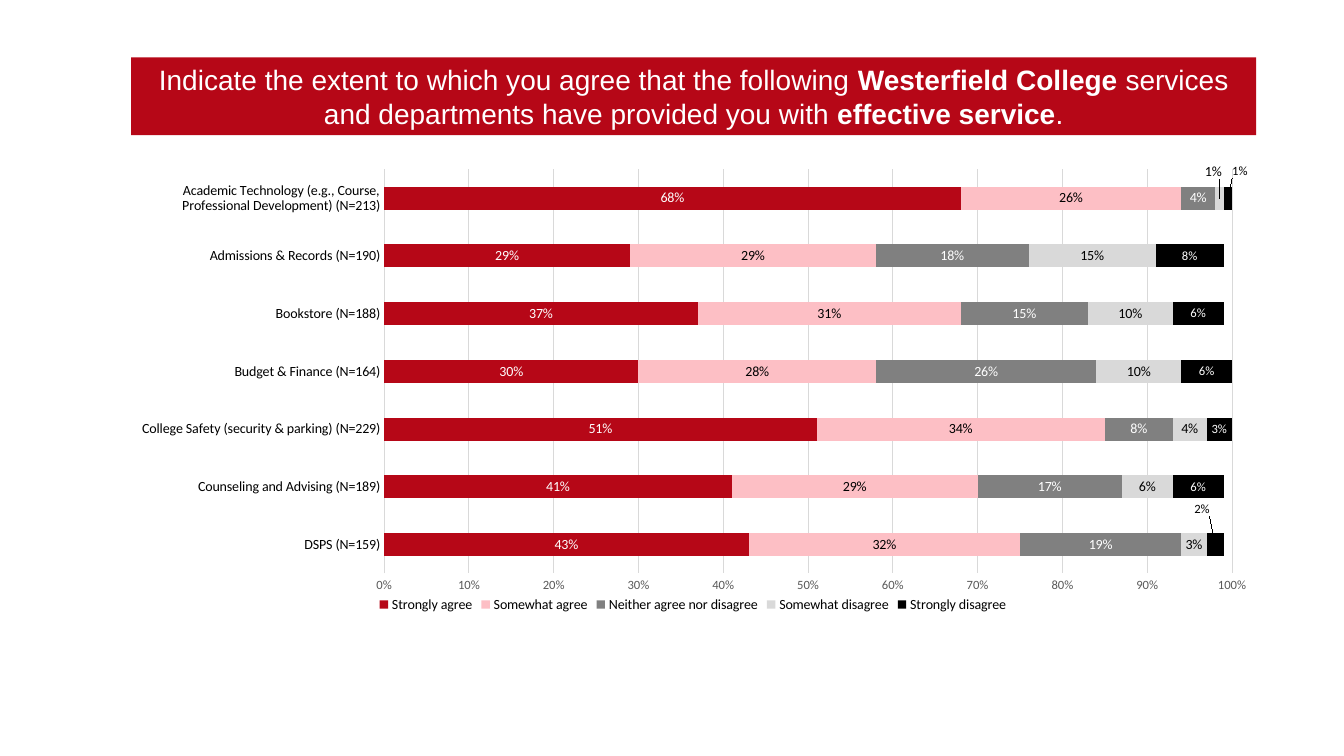
from lxml import etree
from pptx import Presentation
from pptx.chart.data import CategoryChartData
from pptx.dml.color import RGBColor
from pptx.enum.chart import XL_CHART_TYPE, XL_LABEL_POSITION, XL_LEGEND_POSITION, XL_TICK_MARK
from pptx.enum.text import MSO_ANCHOR, MSO_AUTO_SIZE, PP_ALIGN
from pptx.oxml.ns import qn
from pptx.util import Inches, Pt

BAR_STACKED = XL_CHART_TYPE.BAR_STACKED
LABEL_CENTER = XL_LABEL_POSITION.CENTER
LEGEND_BOTTOM = XL_LEGEND_POSITION.BOTTOM
NO_TICK = XL_TICK_MARK.NONE
MIDDLE = MSO_ANCHOR.MIDDLE
NO_AUTOFIT = MSO_AUTO_SIZE.NONE
CENTER = PP_ALIGN.CENTER

COLORS = {
    "red": "B60717", "pink": "FDBFC5", "gray": "808080", "light": "D9D9D9",
    "black": "000000", "white": "FFFFFF", "axis": "595959",
}
TITLE = [
    ("Indicate the extent to which you agree that the following ", False),
    ("Westerfield College ", True),
    ("services and departments have provided you with ", False),
    ("effective service", True),
    (".", False),
]
SERVICES = [
    "DSPS (N=159)",
    "Counseling and Advising (N=189)",
    "College Safety (security & parking) (N=229)",
    "Budget & Finance (N=164)",
    "Bookstore (N=188)",
    "Admissions & Records (N=190)",
    "Academic Technology (e.g., Course, Professional Development) (N=213)",
]
ANSWERS = [
    ("Strongly agree", [0.43, 0.41, 0.51, 0.3, 0.37, 0.29, 0.68], "red", "white", 10),
    ("Somewhat agree", [0.32, 0.29, 0.34, 0.28, 0.31, 0.29, 0.26], "pink", "black", 10),
    ("Neither agree nor disagree", [0.19, 0.17, 0.08, 0.26, 0.15, 0.18, 0.04], "gray", "white", 10),
    ("Somewhat disagree", [0.03, 0.06, 0.04, 0.1, 0.1, 0.15, 0.01], "light", "black", 10),
    ("Strongly disagree", [0.02, 0.06, 0.03, 0.06, 0.06, 0.08, 0.01], "black", "white", 9),
]
MOVED_LABELS = {
    "Somewhat disagree": {6: (-0.06, -0.26)},
    "Strongly disagree": {0: (-0.13, -0.35), 6: (0.12, -0.27)},
}
CHART_LEFT, CHART_TOP, CHART_WIDTH, CHART_HEIGHT = 1.18, 1.59, 11.41, 4.69
PLOT = (3.81, 1.68, 8.41, 4.01)
LEGEND = (3.72, 5.88)


def color(name):
    return RGBColor.from_string(COLORS[name])


def style(font, size, tone, name="Calibri", bold=False):
    font.size = Pt(size)
    font.name = name
    font.bold = bold
    font.color.rgb = color(tone)


def add_text(para, text, **format):
    span = para.add_run()
    span.text = text
    style(span.font, **format)


def set_layout(parent, index, **values):
    for old in parent.findall(qn("c:layout")):
        parent.remove(old)
    layout = etree.Element(qn("c:layout"))
    manual = etree.SubElement(layout, qn("c:manualLayout"))
    for tag, value in values.items():
        etree.SubElement(manual, qn("c:" + tag)).set("val", str(value))
    parent.insert(index, layout)


def add_title(page):
    box = page.shapes.title
    box.left, box.top = Inches(1.3), Inches(0.57)
    box.width, box.height = Inches(11.16), Inches(0.77)
    box.fill.solid()
    box.fill.fore_color.rgb = color("red")
    frame = box.text_frame
    frame.word_wrap = True
    frame.auto_size = NO_AUTOFIT
    frame.vertical_anchor = MIDDLE
    para = frame.paragraphs[0]
    para.alignment = CENTER
    for text, bold in TITLE:
        add_text(para, text, size=20, tone="white", name="Arial", bold=bold)


def format_series(series, fill, tone, size):
    series.format.fill.solid()
    series.format.fill.fore_color.rgb = color(fill)
    labels = series.data_labels
    labels.show_value = True
    labels.number_format = "0%"
    labels.number_format_is_linked = False
    labels.position = LABEL_CENTER
    style(labels.font, size, tone)
    moves = MOVED_LABELS.get(series.name, {})
    for point in moves:
        label = series.points[point].data_label
        style(label.font, size, "black")
        label.position = LABEL_CENTER
    for element in labels._element.findall(qn("c:dLbl")):
        right, down = moves[int(element.find(qn("c:idx")).get("val"))]
        set_layout(element, 1, x=round(right / CHART_WIDTH, 4), y=round(down / CHART_HEIGHT, 4))
        number = etree.Element(qn("c:numFmt"), formatCode="0%", sourceLinked="0")
        element.insert(2, number)


def format_axes(chart):
    services, shares = chart.category_axis, chart.value_axis
    for axis, size, tone in ((services, 10, "black"), (shares, 9, "axis")):
        axis.major_tick_mark = axis.minor_tick_mark = NO_TICK
        style(axis.tick_labels.font, size, tone)
    shares.minimum_scale, shares.maximum_scale, shares.major_unit = 0, 1, 0.1
    shares.tick_labels.number_format = "0%"
    shares.tick_labels.number_format_is_linked = False
    shares.format.line.fill.background()
    shares.has_major_gridlines = True
    for line in (services.format.line, shares.major_gridlines.format.line):
        line.color.rgb = color("light")
        line.width = Pt(0.75)


def add_survey_chart(page):
    data = CategoryChartData(number_format="0%")
    data.categories = SERVICES
    for name, values, *_ in ANSWERS:
        data.add_series(name, values)
    place = [Inches(n) for n in (CHART_LEFT, CHART_TOP, CHART_WIDTH, CHART_HEIGHT)]
    chart = page.shapes.add_chart(BAR_STACKED, *place, data).chart
    chart.has_title = False
    style(chart.font, 10, "black")
    plot = chart.plots[0]
    plot.gap_width, plot.overlap, plot.vary_by_categories = 150, 100, False
    for series, (_, _, fill, tone, size) in zip(plot.series, ANSWERS):
        format_series(series, fill, tone, size)
    format_axes(chart)
    chart.has_legend = True
    chart.legend.position = LEGEND_BOTTOM
    chart.legend.include_in_layout = False
    style(chart.legend.font, 10, "black")

    def fractions(left, top):
        return {"x": round((left - CHART_LEFT) / CHART_WIDTH, 4),
                "y": round((top - CHART_TOP) / CHART_HEIGHT, 4)}

    left, top, width, height = PLOT
    area = chart._chartSpace.find(".//" + qn("c:plotArea"))
    set_layout(area, 0, layoutTarget="inner", xMode="edge", yMode="edge",
               **fractions(left, top),
               w=round(width / CHART_WIDTH, 4), h=round(height / CHART_HEIGHT, 4))
    set_layout(chart.legend._element, 1, xMode="edge", yMode="edge", **fractions(*LEGEND))


def main():
    deck = Presentation()
    deck.slide_width, deck.slide_height = Inches(13.33), Inches(7.5)
    page = deck.slides.add_slide(deck.slide_layouts[5])
    add_title(page)
    add_survey_chart(page)
    deck.save("out.pptx")


if __name__ == "__main__":
    main()
